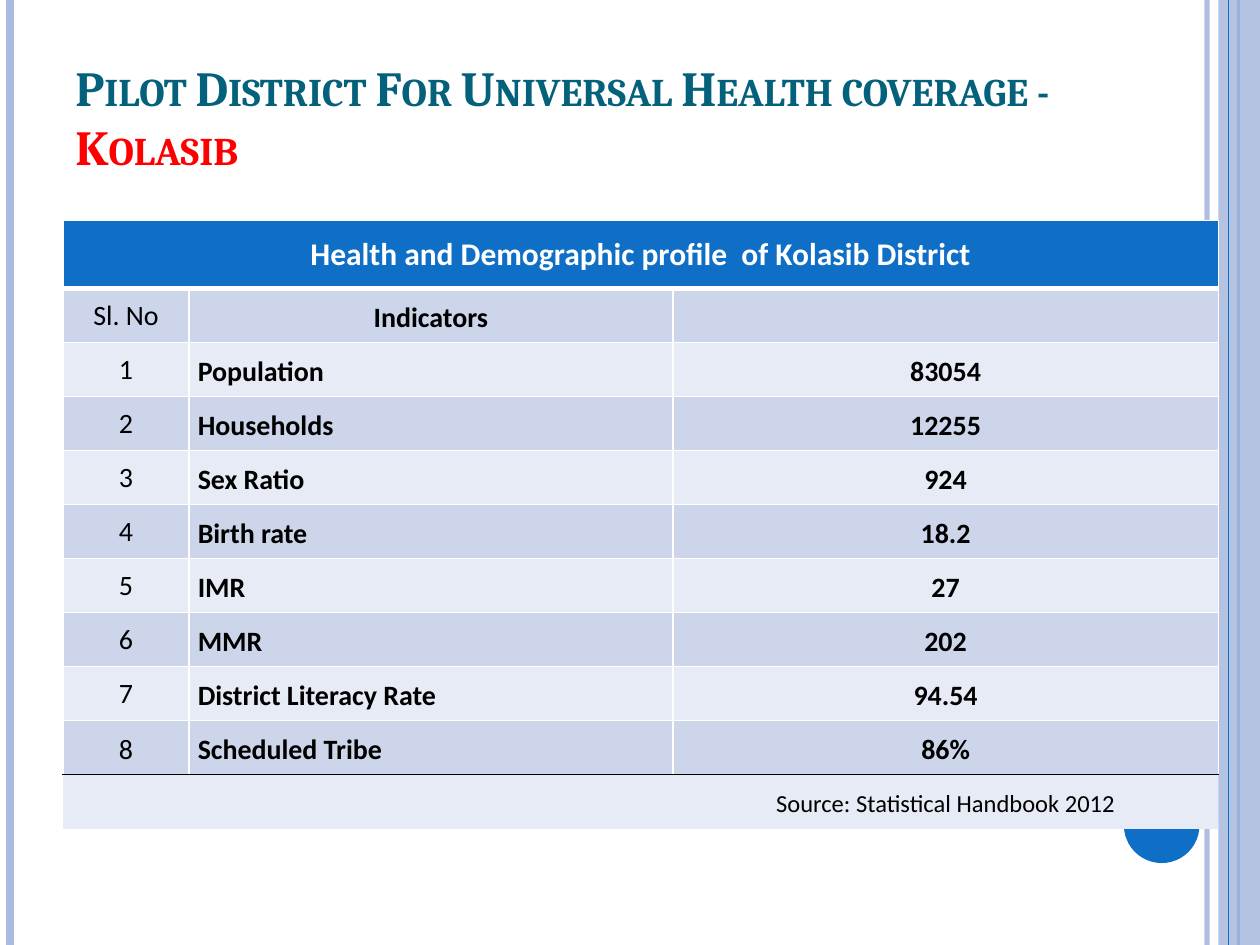
from dataclasses import dataclass

from lxml.etree import SubElement
from pptx import Presentation
from pptx.dml.color import RGBColor
from pptx.enum.shapes import MSO_CONNECTOR, MSO_SHAPE
from pptx.enum.text import MSO_ANCHOR, PP_ALIGN
from pptx.oxml.ns import qn
from pptx.util import Inches, Pt


@dataclass(frozen=True)
class Theme:
    """Colours, fonts and type sizes of the slide."""
    blue: str = "0F6FC6"
    pale_blue: str = "ABBBDF"
    teal: str = "04617B"
    red: str = "FF0000"
    white: str = "FFFFFF"
    black: str = "000000"
    bands: tuple = ("CCD5EA", "E7EBF5")
    title_font: str = "Cambria"
    body_font: str = "Calibri"
    title_size: int = 28
    heading_size: int = 18
    body_size: int = 16
    source_size: int = 14


THEME = Theme()
HEADING = "Health and Demographic profile  of Kolasib District"
ROWS = [
    ("Sl. No", "Indicators", ""),
    ("1", "Population", "83054"),
    ("2", "Households", "12255"),
    ("3", "Sex Ratio", "924"),
    ("4", "Birth rate", "18.2"),
    ("5", "IMR", "27"),
    ("6", "MMR", "202"),
    ("7", "District Literacy Rate", "94.54"),
    ("8", "Scheduled Tribe", "86%"),
    ("", "", "Source: Statistical Handbook 2012"),
]


def apply_format(target, values):
    """Set each named attribute on the target."""
    for name, value in values.items():
        setattr(target, name, value)


def paint(fill, color, opacity=100):
    """Give a fill one solid colour, with an opacity in percent."""
    fill.solid()
    fill.fore_color.rgb = RGBColor.from_string(color)
    if opacity < 100:
        color_xml = fill._xPr.find(qn("a:solidFill"))[0]
        SubElement(color_xml, qn("a:alpha")).set("val", str(opacity * 1000))


def write(paragraph, text, color, **font_format):
    """Add a run with its colour and font format."""
    run = paragraph.add_run()
    run.text = text
    apply_format(run.font, font_format)
    run.font.color.rgb = RGBColor.from_string(color)
    return run


def add_rule(slide, x, top, height, color, width, opacity=100):
    """Draw one vertical rule."""
    rule = slide.shapes.add_connector(
        MSO_CONNECTOR.STRAIGHT, Inches(x), Inches(top), Inches(x), Inches(top + height))
    rule.line.width = Pt(width)
    paint(rule.line.fill, color, opacity)
    SubElement(rule._element.spPr, qn("a:effectLst"))


def add_panel(slide, preset, box, color, opacity=100):
    """Draw one filled shape without outline."""
    panel = slide.shapes.add_shape(preset, *map(Inches, box))
    panel.shadow.inherit = False
    panel.line.fill.background()
    paint(panel.fill, color, opacity)


def add_frame(slide, box):
    """Draw the rules, side band and disc that frame the slide."""
    left, top, width, height = box
    right = left + width
    add_rule(slide, right - 0.42, top, height, THEME.pale_blue, 3, 93)
    add_rule(slide, left + 0.08, top, height, THEME.pale_blue, 4.5)
    add_rule(slide, right - 0.17, top, height, THEME.blue, 1.5)
    add_panel(slide, MSO_SHAPE.RECTANGLE, (right - 0.33, top, 0.33, height),
              THEME.pale_blue, 87)
    add_rule(slide, right - 0.25, top, height, THEME.blue, 0.75)
    add_panel(slide, MSO_SHAPE.OVAL, (right - 1.08, top + height - 1.25, 0.6, 0.6),
              THEME.blue)


def add_title(slide, box):
    """Write the two-coloured title in small capitals."""
    frame = slide.shapes.add_textbox(*map(Inches, box)).text_frame
    apply_format(frame, {"word_wrap": True, "vertical_anchor": MSO_ANCHOR.BOTTOM})
    parts = [("Pilot District For Universal Health coverage - ", THEME.teal),
             ("Kolasib", THEME.red)]
    for text, color in parts:
        run = write(frame.paragraphs[0], text, color, name=THEME.title_font,
                    size=Pt(THEME.title_size), bold=True)
        run._r.get_or_add_rPr().set("cap", "small")


def set_borders(cell, **edges):
    """Set each edge (L, R, T, B) to a colour and width, or to none."""
    properties = cell._tc.get_or_add_tcPr()
    for side in "LRTB":
        edge = SubElement(properties, qn(f"a:ln{side}"))
        if edges.get(side):
            color, width = edges[side]
            edge.set("w", str(Pt(width)))
            solid = SubElement(edge, qn("a:solidFill"))
            SubElement(solid, qn("a:srgbClr")).set("val", color)
        else:
            SubElement(edge, qn("a:noFill"))


def fill_cell(cell, text, color, align, tight=False, **font_format):
    """Write a cell; tight cells have slim insets and wider line spacing."""
    cell.vertical_anchor = MSO_ANCHOR.MIDDLE
    paragraph = cell.text_frame.paragraphs[0]
    paragraph.alignment = align
    if tight:
        apply_format(cell, {"margin_left": Inches(0.07), "margin_right": Inches(0.07),
                            "margin_top": 0, "margin_bottom": 0})
        paragraph.line_spacing = 1.15
    if text:
        write(paragraph, text, color, name=THEME.body_font, **font_format)


def add_profile_table(slide, box):
    """Build the district profile table with its heading and source row."""
    left, top, width, height = box
    table = slide.shapes.add_table(len(ROWS) + 1, 3, *map(Inches, box)).table
    apply_format(table, {"first_row": False, "horz_banding": False})
    for column, share in zip(table.columns, (1, 3.84, 4.33)):
        column.width = Inches(width * share / 9.17)
    heading_height = 0.54
    for row in table.rows:
        row.height = Inches((height - heading_height) / len(ROWS))
    table.rows[0].height = Inches(heading_height)

    thin, thick, dark = (THEME.white, 1), (THEME.white, 3), (THEME.black, 1)
    for cell in table.rows[0].cells:
        set_borders(cell, L=thin, R=thin, T=thin, B=thick)
        paint(cell.fill, THEME.blue)
    heading = table.cell(0, 0)
    heading.merge(table.cell(0, 2))
    fill_cell(heading, HEADING, THEME.white, PP_ALIGN.CENTER,
              size=Pt(THEME.heading_size), bold=True)

    last = len(ROWS) - 1
    for index, values in enumerate(ROWS):
        is_source = index == last
        size = THEME.source_size if is_source else THEME.body_size
        for column, text in enumerate(values):
            cell = table.cell(index + 1, column)
            if is_source:
                set_borders(cell, T=dark)
            else:
                set_borders(cell, L=thin, R=thin, T=thin if index else thick,
                            B=dark if index == last - 1 else thin)
            paint(cell.fill, THEME.bands[index % 2])
            is_label = column == 1 and index > 0
            fill_cell(cell, text, THEME.black,
                      PP_ALIGN.LEFT if is_label else PP_ALIGN.CENTER,
                      tight=column > 0 or index >= last - 1,
                      size=Pt(size), bold=column > 0 and not is_source)


def main():
    """Build and save the slide."""
    deck = Presentation()
    apply_format(deck, {"slide_width": Inches(10), "slide_height": Inches(7.5)})
    slide = deck.slides.add_slide(deck.slide_layouts[6])
    add_frame(slide, (0, 0, 10, 7.5))
    add_title(slide, (0.5, 0.5, 9, 0.94))
    add_profile_table(slide, (0.5, 1.75, 9.17, 4.83))
    deck.save("out.pptx")


if __name__ == "__main__":
    main()
